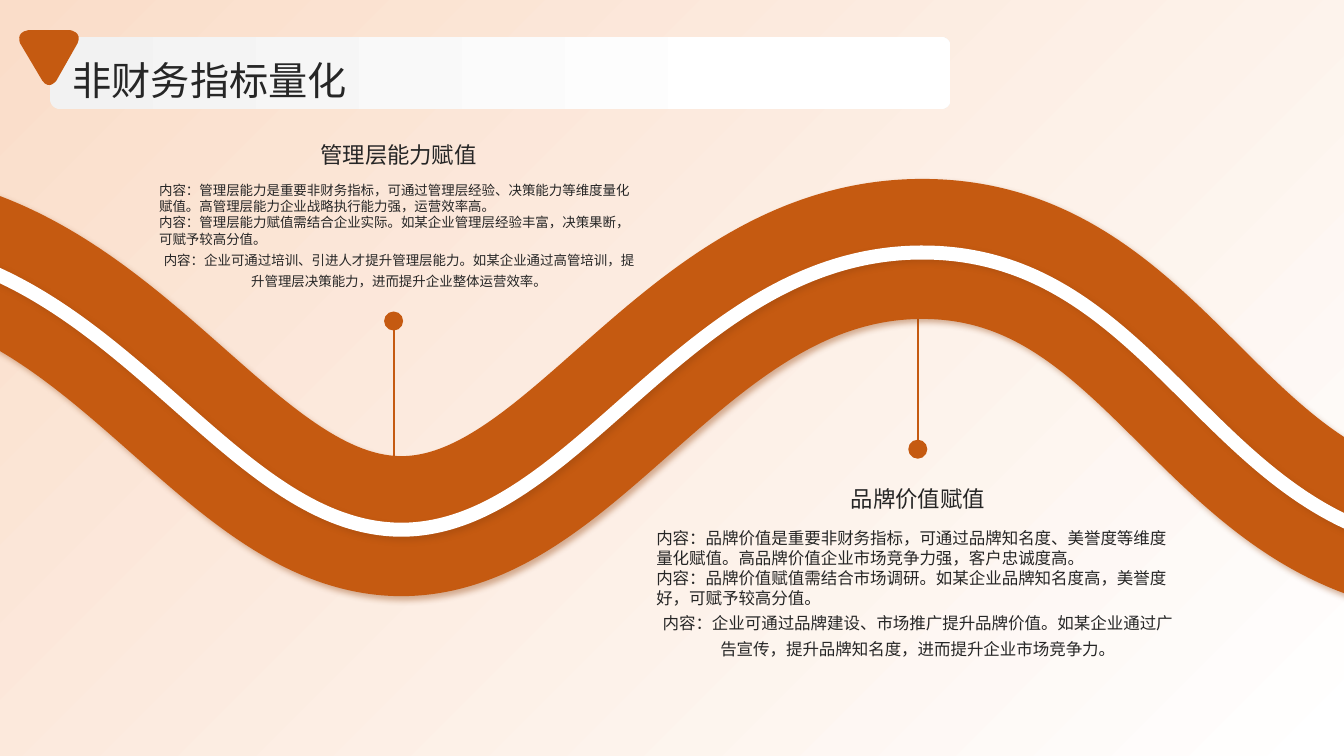
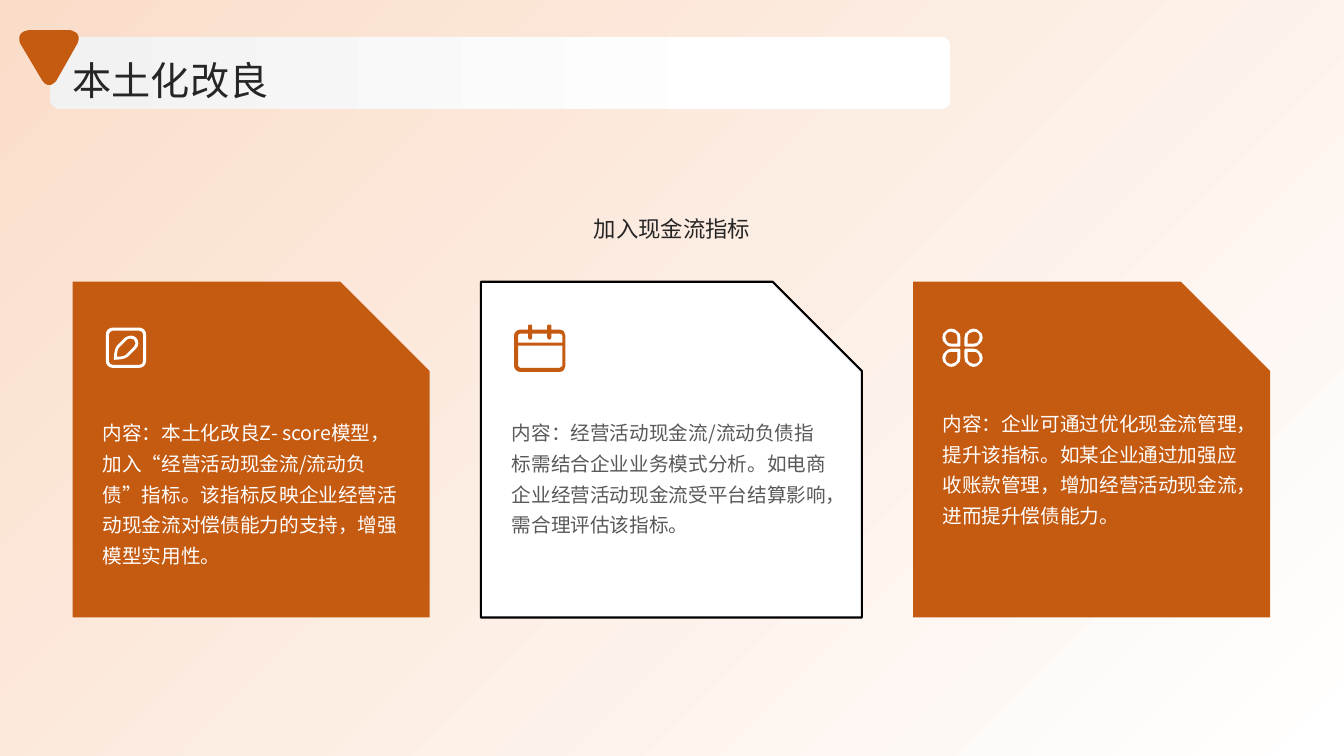
from lxml import etree
from pptx import Presentation
from pptx.dml.color import RGBColor
from pptx.enum.shapes import MSO_CONNECTOR, MSO_SHAPE
from pptx.enum.text import MSO_ANCHOR, MSO_AUTO_SIZE, PP_ALIGN
from pptx.oxml import parse_xml
from pptx.oxml.ns import nsdecls, qn
from pptx.util import Cm, Pt

LEFT, CENTER = PP_ALIGN.LEFT, PP_ALIGN.CENTER
TOP, MIDDLE, BOTTOM = MSO_ANCHOR.TOP, MSO_ANCHOR.MIDDLE, MSO_ANCHOR.BOTTOM
STRAIGHT = MSO_CONNECTOR.STRAIGHT
FONT = "Noto Sans CJK SC"
GRID = 2.54 / 100
HEX = {
    "accent": "C55A11",
    "peach": "FADDC9",
    "white": "FFFFFF",
    "black": "000000",
    "band": "F2F2F2",
    "text": "262626",
    "grey": "595959",
    "shadow": "94430D",
}
COLORS = {name: RGBColor.from_string(value) for name, value in HEX.items()}


def write_text(tf, texts, size, color="text", align=LEFT, spacing=1.0, anchor=TOP):
    tf.word_wrap = True
    tf.auto_size = MSO_AUTO_SIZE.NONE
    tf.vertical_anchor = anchor
    tf.margin_left = tf.margin_right = tf.margin_top = tf.margin_bottom = 0
    tf.text = "\n".join(texts)
    for p in tf.paragraphs:
        p.alignment = align
        p.line_spacing = spacing
        p.font.size = Pt(size)
        p.font.color.rgb = COLORS[color]
        p.font.name = FONT
        latin = p._p.pPr.find(qn("a:defRPr")).find(qn("a:latin"))
        latin.addnext(etree.Element(qn("a:ea"), typeface=FONT))


def draw_path(s, outline, color):
    builder = None
    kinds = []
    tokens = outline.split()
    while tokens:
        kind = tokens.pop(0)
        numbers = []
        while tokens and not tokens[0].isalpha():
            numbers.append(Cm(float(tokens.pop(0)) * GRID))
        points = list(zip(numbers[::2], numbers[1::2]))
        if kind == "M" and builder is None:
            builder = s.shapes.build_freeform(*points[0])
        elif kind == "M":
            builder.move_to(*points[0])
        else:
            builder.add_line_segments(points, close=kind == "Z")
            kinds += [kind] * (len(points) // (3 if kind == "C" else 1))
    shape = builder.convert_to_shape()
    lines = list(shape._element.spPr.iter(qn("a:lnTo")))
    for kind in kinds:
        line = lines.pop(0)
        if kind == "C":
            curve = etree.Element(qn("a:cubicBezTo"))
            line.addprevious(curve)
            for part in (line, lines.pop(0), lines.pop(0)):
                curve.append(part[0])
                part.getparent().remove(part)
    shape.fill.solid()
    shape.fill.fore_color.rgb = COLORS[color]
    shape.line.fill.background()
    return shape


prs = Presentation()
prs.slide_width, prs.slide_height = Cm(33.87), Cm(19.05)

TRIANGLE = ("M 28 30 L 70 30 C 70 30 82 32 77 43 L 56 80 C 56 80 49 90 42 80 "
            "L 20 43 C 20 43 15 32 28 30 Z")
slides = []
for title in ("非财务指标量化", "本土化改良"):
    s = prs.slides.add_slide(prs.slide_layouts[5])
    slides.append(s)
    backdrop = s.shapes.add_shape(
        MSO_SHAPE.RECTANGLE, 0, 0, prs.slide_width, prs.slide_height)
    band = s.shapes.add_shape(
        MSO_SHAPE.ROUNDED_RECTANGLE, Cm(1.26), Cm(0.93), Cm(22.7), Cm(1.82))
    band.adjustments[0] = 0.14
    for panel, angle, stops in (
            (backdrop, 135, (("white", 0), ("peach", 1))),
            (band, 0, (("band", 0), ("white", 0.8)))):
        panel.fill.gradient()
        panel.fill.gradient_angle = angle
        for stop, (color, position) in zip(panel.fill.gradient_stops, stops):
            stop.color.rgb = COLORS[color]
            stop.position = position
        panel.line.fill.background()

    heading = s.shapes.title
    heading.left, heading.top = Cm(1.83), Cm(1.3)
    heading.width, heading.height = Cm(29.64), Cm(1.3)
    write_text(heading.text_frame, [title], 28, spacing=1.1, anchor=MIDDLE)
    band._element.addnext(heading._element)
    draw_path(s, TRIANGLE, "accent")

s = slides[0]
DOT = 0.48
for x, dot_y, road_y in ((9.92, 8.09, 14.55), (23.13, 11.32, 5.23)):
    leader = s.shapes.add_connector(STRAIGHT, Cm(x), Cm(dot_y), Cm(x), Cm(road_y))
    leader.line.color.rgb = COLORS["accent"]
    leader.line.width = Pt(1.5)
    dot = s.shapes.add_shape(
        MSO_SHAPE.OVAL, Cm(x - DOT / 2), Cm(dot_y - DOT / 2), Cm(DOT), Cm(DOT))
    dot.fill.solid()
    dot.fill.fore_color.rgb = COLORS["accent"]
    dot.line.fill.background()

ROAD = ("M -848 566 C -690 432 -387 238 -139 238 C 110 239 220 520 397 522 "
        "C 573 523 683 244 919 247 C 1155 250 1205 534 1450 541 "
        "C 1696 547 1917 281 1965 258")
for color, width, drop in (("accent", 100, 0), ("white", 10, 0.09)):
    road = draw_path(s, ROAD, color)
    road.top += Cm(drop)
    road.fill.background()
    road.line.color.rgb = COLORS[color]
    road.line.width = Pt(width)
    road._element.spPr.append(parse_xml(
        f'<a:effectLst {nsdecls("a")}><a:outerShdw blurRad="{Pt(4)}" dist="{Pt(3)}" '
        f'dir="2700000" algn="tl" rotWithShape="0"><a:srgbClr val="{HEX["shadow"]}">'
        '<a:alpha val="40000"/></a:srgbClr></a:outerShdw></a:effectLst>'))

topics = [
    ("管理层能力赋值", (4.01, 2.4, 12.07, 1.84), (4.01, 4.59, 12.09, 2.82), 9.6, [
        "内容：管理层能力是重要非财务指标，可通过管理层经验、决策能力等维度量化赋值。高管理层能力企业战略执行能力强，运营效率高。",
        "内容：管理层能力赋值需结合企业实际。如某企业管理层经验丰富，决策果断，可赋予较高分值。",
        "内容：企业可通过培训、引进人才提升管理层能力。如某企业通过高管培训，提升管理层决策能力，进而提升企业整体运营效率。",
    ]),
    ("品牌价值赋值", (16.55, 11.28, 13.16, 1.63), (16.54, 13.31, 13.18, 3.58), 11.8, [
        "内容：品牌价值是重要非财务指标，可通过品牌知名度、美誉度等维度量化赋值。高品牌价值企业市场竞争力强，客户忠诚度高。",
        "内容：品牌价值赋值需结合市场调研。如某企业品牌知名度高，美誉度好，可赋予较高分值。",
        "内容：企业可通过品牌建设、市场推广提升品牌价值。如某企业通过广告宣传，提升品牌知名度，进而提升企业市场竞争力。",
    ]),
]
for topic, topic_box, body_box, size, body in topics:
    box = s.shapes.add_textbox(*map(Cm, topic_box))
    write_text(box.text_frame, [topic], 16, align=CENTER, anchor=BOTTOM)
    box = s.shapes.add_textbox(*map(Cm, body_box))
    write_text(box.text_frame, body, size)
    closing = box.text_frame.paragraphs[-1]
    closing.alignment = CENTER
    closing.line_spacing = 1.3

s = slides[1]
box = s.shapes.add_textbox(Cm(1.88), Cm(3.71), Cm(30.12), Cm(2.39))
write_text(box.text_frame, ["加入现金流指标"], 16, align=CENTER, spacing=1.5, anchor=BOTTOM)

EDIT = (
    "M 130 336 C 128 336 127 336 126 337 L 118 345 C 117 346 116 350 116 354 "
    "C 120 354 124 353 125 352 L 133 344 C 135 342 135 339 133 337 "
    "C 132 336 131 336 130 336 Z "
    "M 130 333 C 132 333 134 334 135 335 C 138 338 138 343 135 346 L 127 354 "
    "C 124 357 113 357 113 357 C 113 357 113 346 116 343 L 124 335 "
    "C 126 334 128 333 130 333 Z "
    "M 112 328 C 110 328 108 330 108 332 L 108 358 C 108 361 110 362 112 362 "
    "L 138 362 C 141 362 142 361 142 358 L 142 332 C 142 330 141 328 138 328 Z "
    "M 112 325 L 138 325 C 142 325 145 328 145 332 L 145 358 C 145 362 142 365 138 365 "
    "L 112 365 C 108 365 105 362 105 358 L 105 332 C 105 328 108 325 112 325 Z")
CALENDAR = (
    "M 514 343 L 514 363 C 514 363 514 364 515 364 C 515 365 516 365 516 365 L 555 365 "
    "C 556 365 556 365 557 364 C 557 364 558 363 558 363 L 558 343 Z "
    "M 516 331 C 515 331 514 332 514 333 L 514 340 L 558 340 L 558 333 "
    "C 558 332 557 331 555 331 L 547 331 L 547 335 C 547 336 546 337 545 337 "
    "C 544 337 543 336 543 335 L 543 331 L 528 331 L 528 335 C 528 336 527 337 526 337 "
    "C 525 337 524 336 524 335 L 524 331 Z "
    "M 526 322 C 527 322 528 322 528 323 L 528 327 L 543 327 L 543 323 "
    "C 543 322 544 322 545 322 C 546 322 547 322 547 323 L 547 327 L 555 327 "
    "C 559 327 561 330 561 333 L 561 363 C 561 366 559 369 555 369 L 516 369 "
    "C 513 369 510 366 510 363 L 510 333 C 510 330 513 327 516 327 L 524 327 L 524 323 "
    "C 524 322 525 322 526 322 Z")
PETAL = (
    "M -3 -1 L -11 -1 C -13 -1 -16 -2 -17 -4 C -19 -5 -20 -8 -20 -10 "
    "C -20 -13 -19 -15 -17 -16 C -16 -18 -13 -19 -11 -19 C -9 -19 -6 -18 -5 -16 "
    "C -3 -15 -2 -13 -2 -10 L -2 -2 C -2 -2 -3 -1 -3 -1 Z "
    "M -11 -16 C -15 -16 -17 -14 -17 -10 C -17 -7 -15 -4 -11 -4 L -5 -4 L -5 -10 "
    "C -5 -14 -8 -16 -11 -16 Z")
clover = []
for flip_x, flip_y in ((1, 1), (-1, 1), (1, -1), (-1, -1)):
    axes = [(955, flip_x), (345, flip_y)]
    for token in PETAL.split():
        if token.isalpha():
            clover.append(token)
        else:
            center, flip = axes[0]
            clover.append(str(center + flip * int(token)))
            axes.reverse()

cards = [
    (9, "accent", "white", EDIT, (2.59, 10.44, 7.49, 3.48),
     "内容：本土化改良Z- score模型，加入“经营活动现金流/流动负债”指标。该指标反映企业经营活动现金流对偿债能力的支持，增强模型实用性。"),
    (9.6, "white", "grey", CALENDAR, (12.9, 10.44, 8, 3.48),
     "内容：经营活动现金流/流动负债指标需结合企业业务模式分析。如电商企业经营活动现金流受平台结算影响，需合理评估该指标。"),
    (9, "accent", "white", " ".join(clover), (23.75, 10.21, 7.49, 4.65),
     "内容：企业可通过优化现金流管理，提升该指标。如某企业通过加强应收账款管理，增加经营活动现金流，进而提升偿债能力。"),
]
GAP = 1.29
CARD_HEIGHT, SNIP = 8.46, 2.25
x = 1.83
for width, color, text_color, icon, text_box, text in cards:
    card = s.shapes.add_shape(
        MSO_SHAPE.SNIP_1_RECTANGLE, Cm(x), Cm(7.1), Cm(width), Cm(CARD_HEIGHT))
    card.adjustments[0] = SNIP / CARD_HEIGHT
    card.fill.solid()
    card.fill.fore_color.rgb = COLORS[color]
    if color == "white":
        card.line.color.rgb = COLORS["black"]
        card.line.width = Pt(1.5)
    else:
        card.line.fill.background()
    draw_path(s, icon, "accent" if color == "white" else "white")
    box = s.shapes.add_textbox(*map(Cm, text_box))
    write_text(box.text_frame, [text], 14, text_color, spacing=1.3)
    x += width + GAP

for s in slides:
    for shape in s.shapes:
        spPr = shape._element.spPr
        if spPr.find(qn("a:effectLst")) is None and not shape.is_placeholder:
            etree.SubElement(spPr, qn("a:effectLst"))

prs.save("out.pptx")
